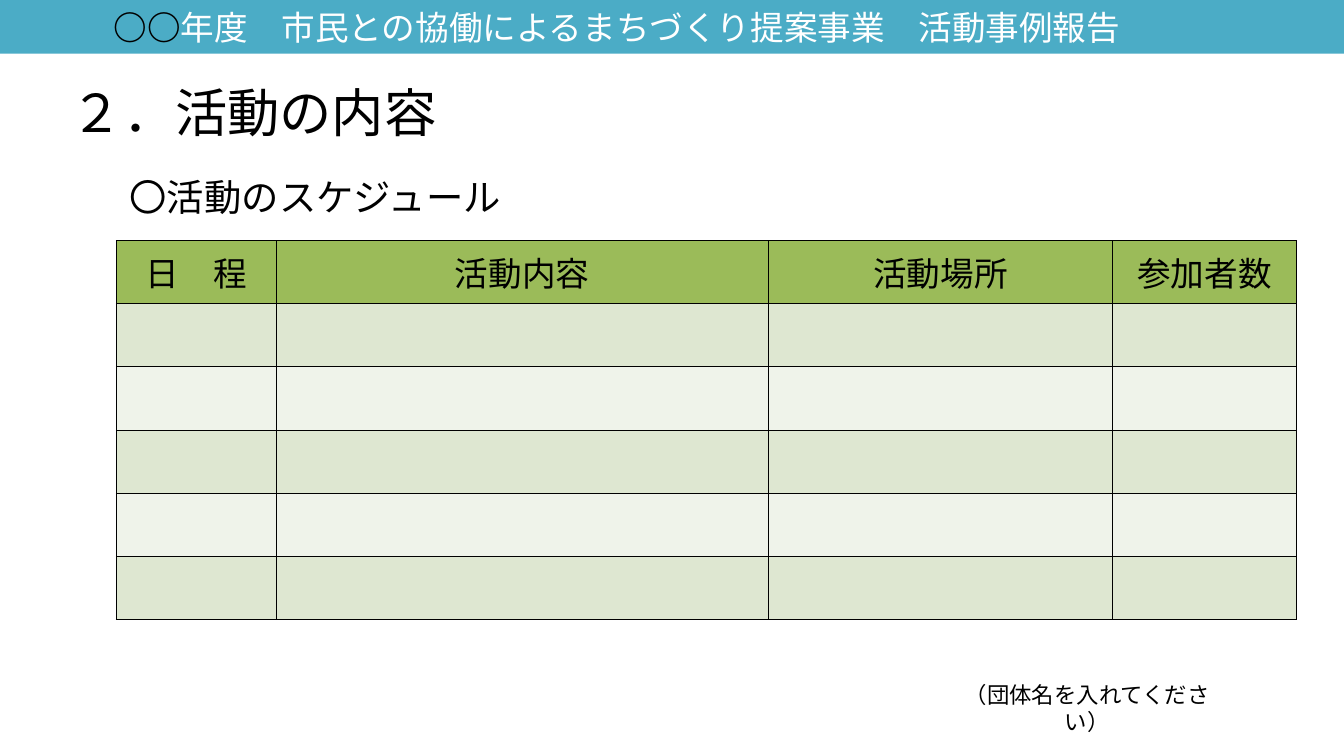
"""Build the activity schedule slide of a civic project report."""
from dataclasses import dataclass

from lxml.etree import SubElement
from pptx import Presentation
from pptx.dml.color import RGBColor
from pptx.enum.lang import MSO_LANGUAGE_ID
from pptx.enum.shapes import MSO_SHAPE
from pptx.enum.text import MSO_ANCHOR, PP_ALIGN
from pptx.oxml.ns import qn
from pptx.util import Emu, Pt

SCALE = 4572
WIDE, HIGH = 2000, 1125
INK = {"black": "000000", "white": "FFFFFF", "teal": "4BACC6",
       "green": "9BBB59", "sage": "DEE7D1", "pale": "EFF3EA"}
HEADS = ["日　程", "活動内容", "活動場所", "参加者数"]
COLS = [238, 732, 513, 273]
ROWS, PITCH = 6, 94


@dataclass
class Run:
    text: str
    size: int
    face: str = "Arial"
    ink: str = "black"
    bold: bool = False


@dataclass
class Block:
    box: tuple[int, int, int, int]
    runs: list[Run]
    align: PP_ALIGN = PP_ALIGN.LEFT
    anchor: MSO_ANCHOR = MSO_ANCHOR.MIDDLE
    inset: int = 20
    fill: str = ""


BLOCKS = [
    Block((86, 84, 1800, 164), [Run("２．活動の内容", 28)]),
    Block((1394, 1024, 448, 60), [Run("（団体名を入れてください）", 12)], PP_ALIGN.CENTER),
    Block((0, 0, WIDE, 80), [
        Run("○○", 18, "Calibri", bold=True),
        Run("年度　市民との協働によるまちづくり提案事業　活動事例報告", 18,
            "Noto Sans CJK JP", "white"),
    ], inset=169, fill="teal"),
    Block((173, 250, 1670, 754), [Run("〇活動のスケジュール", 20)], anchor=MSO_ANCHOR.TOP),
]


def px(size: int) -> Emu:
    """Turn px into EMU."""
    return Emu(size * SCALE)


def tint(name: str) -> RGBColor:
    """Look up a colour."""
    return RGBColor.from_string(INK[name])


def apply(item: object, form: dict) -> None:
    """Set each format value on the item."""
    for key, value in form.items():
        setattr(item, key, value)


def paint(item: object, name: str) -> None:
    """Fill a shape or cell with one colour."""
    item.fill.solid()
    item.fill.fore_color.rgb = tint(name)


def write(frame: object, runs: list[Run], align: PP_ALIGN) -> None:
    """Put the runs in the first paragraph."""
    para = frame.paragraphs[0]
    para.alignment = align
    for part in runs:
        run = para.add_run()
        run.text = part.text
        apply(run.font, {"name": part.face, "size": Pt(part.size), "bold": part.bold,
                         "language_id": MSO_LANGUAGE_ID.JAPANESE})
        run.font.color.rgb = tint(part.ink)


def draw(slide: object, block: Block) -> None:
    """Draw a text block, with a bar behind it if it has a fill."""
    box = [px(side) for side in block.box]
    if block.fill:
        shape = slide.shapes.add_shape(MSO_SHAPE.RECTANGLE, *box)
        shape.shadow.inherit = False
        shape.line.fill.background()
        paint(shape, block.fill)
    else:
        shape = slide.shapes.add_textbox(*box)
    apply(shape.text_frame, {"word_wrap": True, "vertical_anchor": block.anchor,
                             "margin_left": px(block.inset)})
    write(shape.text_frame, block.runs, block.align)


def edge(cell: object) -> None:
    """Give the cell thin black borders, placed ahead of its fill."""
    props = cell._tc.get_or_add_tcPr()
    for spot, side in enumerate(("lnL", "lnR", "lnT", "lnB")):
        line = SubElement(props, qn(f"a:{side}"), w=str(Pt(0.5)))
        solid = SubElement(line, qn("a:solidFill"))
        SubElement(solid, qn("a:srgbClr"), val=INK["black"])
        props.insert(spot, line)


def grid(slide: object) -> None:
    """Draw the schedule table."""
    table = slide.shapes.add_table(ROWS, len(COLS), px(173), px(358),
                                   px(sum(COLS)), px(ROWS * PITCH)).table
    apply(table, {"first_row": False, "horz_banding": False})
    for col, width in zip(table.columns, COLS):
        col.width = px(width)
    for rank, row in enumerate(table.rows):
        row.height = px(PITCH)
        fill = ("sage" if rank % 2 else "pale") if rank else "green"
        for cell in row.cells:
            paint(cell, fill)
            edge(cell)
    for cell, head in zip(table.rows[0].cells, HEADS):
        cell.vertical_anchor = MSO_ANCHOR.MIDDLE
        write(cell.text_frame, [Run(head, 18, "Calibri")], PP_ALIGN.CENTER)


def main() -> None:
    """Build and save the deck."""
    deck = Presentation()
    apply(deck, {"slide_width": px(WIDE), "slide_height": px(HIGH)})
    slide = deck.slides.add_slide(deck.slide_layouts[6])
    for block in BLOCKS:
        draw(slide, block)
    grid(slide)
    deck.save("out.pptx")


if __name__ == "__main__":
    main()
